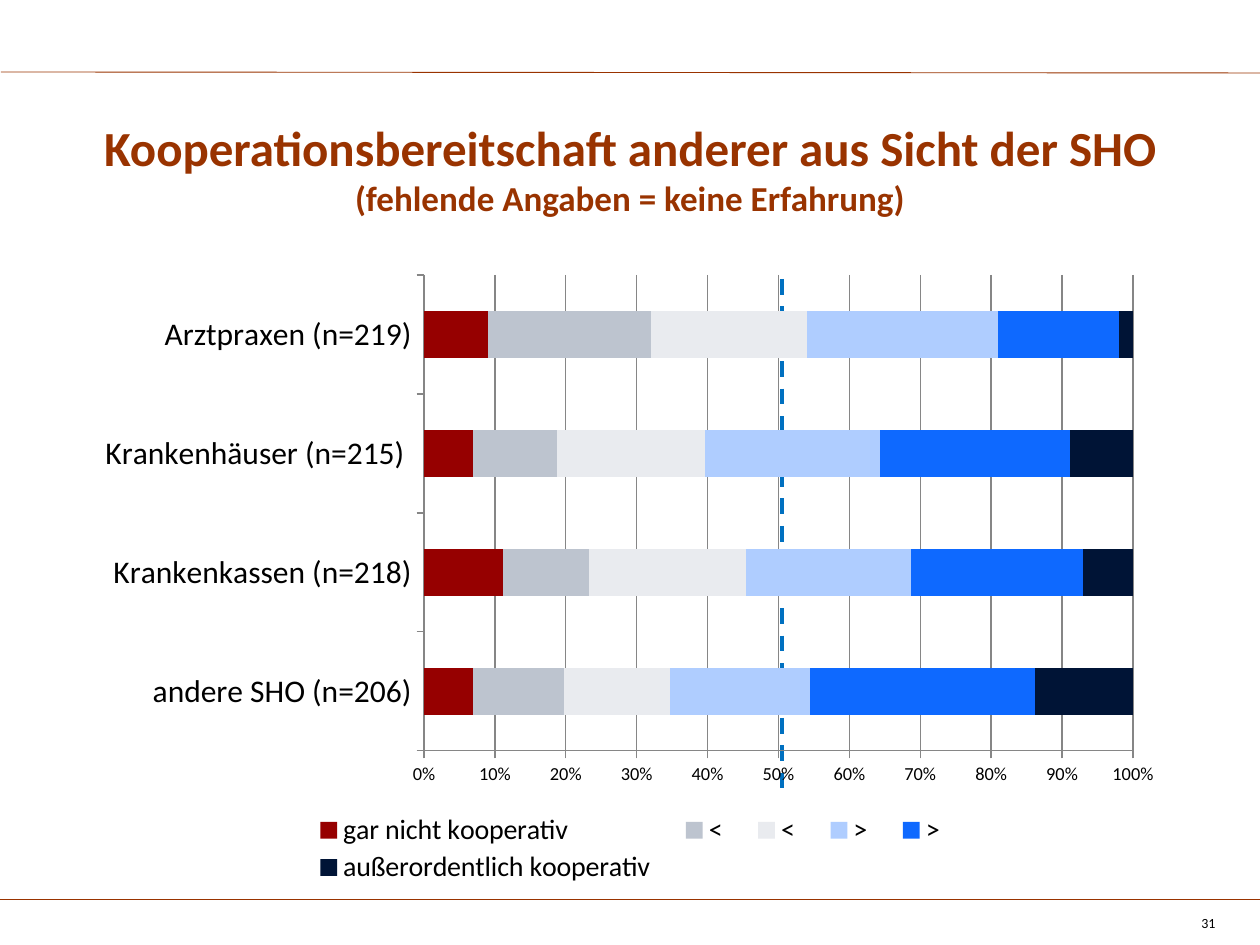
import pptx
import pptx.chart.data
import pptx.dml.color
import pptx.enum.chart
import pptx.enum.dml
import pptx.enum.shapes
import pptx.enum.text
import pptx.oxml
import pptx.oxml.ns
import pptx.util

RGB = pptx.dml.color.RGBColor
RUST = RGB(0x99, 0x33, 0x00)
BLUE = RGB(0x00, 0x70, 0xC0)
GREY = RGB(0x86, 0x86, 0x86)
BLACK = RGB(0, 0, 0)
FONT = "Calibri"
PX = 914400 // 126

TITLE = [("Kooperationsbereitschaft anderer aus Sicht der SHO", 28),
         ("(fehlende Angaben = keine Erfahrung)", 20)]
PAGE = "31"
GROUPS = ["andere SHO (n=206)", "Krankenkassen (n=218)",
          "Krankenhäuser (n=215) ", "Arztpraxen (n=219)"]
RATINGS = [
    ("gar nicht kooperativ", (7, 11, 7, 9), RGB(0x96, 0x00, 0x00)),
    ("<", (13, 12, 12, 23), RGB(0xBD, 0xC4, 0xCF)),
    ("<", (15, 22, 21, 22), RGB(0xE9, 0xEB, 0xEF)),
    (">", (20, 23, 25, 27), RGB(0xAF, 0xCD, 0xFF)),
    (">", (32, 24, 27, 17), RGB(0x0E, 0x69, 0xFF)),
    ("außerordentlich kooperativ", (14, 7, 9, 2), RGB(0x00, 0x14, 0x36)),
]
# Boxes: left, top, width, height in px
TITLE_BOX = (84, 84, 1092, 168)
PAGE_BOX = (1165, 908, 63, 21)
CHART_BOX = (84, 262, 1092, 630)
PLOT_BOX = (424, 275, 709, 476)
LEGEND_BOX = (294, 810, 672, 78)
# Lines: x1, y1, x2, y2 in px
RULES = [(1, 72, 1260, 73), (0, 899, 1260, 899)]
MIDDLE = (782, 279, 782, 795)


def emu(box):
    return [n * PX for n in box]


def add_line(slide, ends, color, width):
    line = slide.shapes.add_connector(
        pptx.enum.shapes.MSO_CONNECTOR.STRAIGHT, *emu(ends))
    line.line.color.rgb = color
    line.line.width = pptx.util.Pt(width)
    line._element.spPr.append(pptx.oxml.parse_xml(
        f'<a:effectLst {pptx.oxml.ns.nsdecls("a")}/>'))
    return line


def add_box(slide, box):
    frame = slide.shapes.add_textbox(*emu(box)).text_frame
    frame.word_wrap = True
    return frame


def set_font(font, size, color=BLACK):
    font.name = FONT
    font.size = pptx.util.Pt(size)
    font.color.rgb = color


def place(parent, index, box, inner=False):
    """Fix a chart part at a px box, as fractions of the chart."""
    left, top, wide, high = CHART_BOX
    parts = {"x": (box[0] - left) / wide, "y": (box[1] - top) / high,
             "w": box[2] / wide, "h": box[3] / high}
    target = '<c:layoutTarget val="inner"/>' if inner else ""
    modes = "".join(f'<c:{k}Mode val="edge"/>' for k in "xy")
    sizes = "".join(f'<c:{k} val="{v:.4f}"/>' for k, v in parts.items())
    for old in parent.findall(pptx.oxml.ns.qn("c:layout")):
        parent.remove(old)
    parent.insert(index, pptx.oxml.parse_xml(
        f'<c:layout {pptx.oxml.ns.nsdecls("c")}><c:manualLayout>'
        f'{target}{modes}{sizes}</c:manualLayout></c:layout>'))


def add_title(slide):
    frame = add_box(slide, TITLE_BOX)
    frame.vertical_anchor = pptx.enum.text.MSO_ANCHOR.MIDDLE
    para = frame.paragraphs[0]
    para.alignment = pptx.enum.text.PP_ALIGN.CENTER
    for i, (text, size) in enumerate(TITLE):
        if i:
            para.add_line_break()
        run = para.add_run()
        run.text = text
        set_font(run.font, size, RUST)
        run.font.bold = True


def add_page(slide):
    para = add_box(slide, PAGE_BOX).paragraphs[0]
    para.text = PAGE
    para.alignment = pptx.enum.text.PP_ALIGN.RIGHT
    set_font(para.font, 8)


def add_chart(slide):
    data = pptx.chart.data.CategoryChartData()
    data.categories = GROUPS
    for name, vals, _ in RATINGS:
        data.add_series(name, vals)
    chart = slide.shapes.add_chart(
        pptx.enum.chart.XL_CHART_TYPE.BAR_STACKED_100,
        *emu(CHART_BOX), data).chart
    chart.has_title = False
    set_font(chart.font, 10)

    plot = chart.plots[0]
    plot.gap_width, plot.overlap = 150, 100
    plot.vary_by_categories = False
    for series, (_, _, color) in zip(plot.series, RATINGS):
        series.format.fill.solid()
        series.format.fill.fore_color.rgb = color

    for axis, size in ((chart.category_axis, 18), (chart.value_axis, 10.5)):
        axis.major_tick_mark = pptx.enum.chart.XL_TICK_MARK.OUTSIDE
        axis.format.line.color.rgb = GREY
        set_font(axis.tick_labels.font, size)
    values = chart.value_axis
    values.has_major_gridlines = True
    values.major_gridlines.format.line.color.rgb = GREY
    values.tick_labels.number_format = "0%"
    values.tick_labels.number_format_is_linked = False

    chart.has_legend = True
    legend = chart.legend
    legend.position = pptx.enum.chart.XL_LEGEND_POSITION.BOTTOM
    legend.include_in_layout = False
    set_font(legend.font, 16)
    place(legend._element, 1, LEGEND_BOX)
    place(chart._chartSpace.chart.plotArea, 0, PLOT_BOX, inner=True)


def main():
    deck = pptx.Presentation()
    deck.slide_width, deck.slide_height = emu((1260, 945))
    slide = deck.slides.add_slide(deck.slide_layouts[6])
    for ends in RULES:
        add_line(slide, ends, RUST, 0.5)
    add_title(slide)
    add_page(slide)
    middle = add_line(slide, MIDDLE, BLUE, 2.25)
    middle.line.dash_style = pptx.enum.dml.MSO_LINE.DASH
    add_chart(slide)
    deck.save("out.pptx")


if __name__ == "__main__":
    main()
